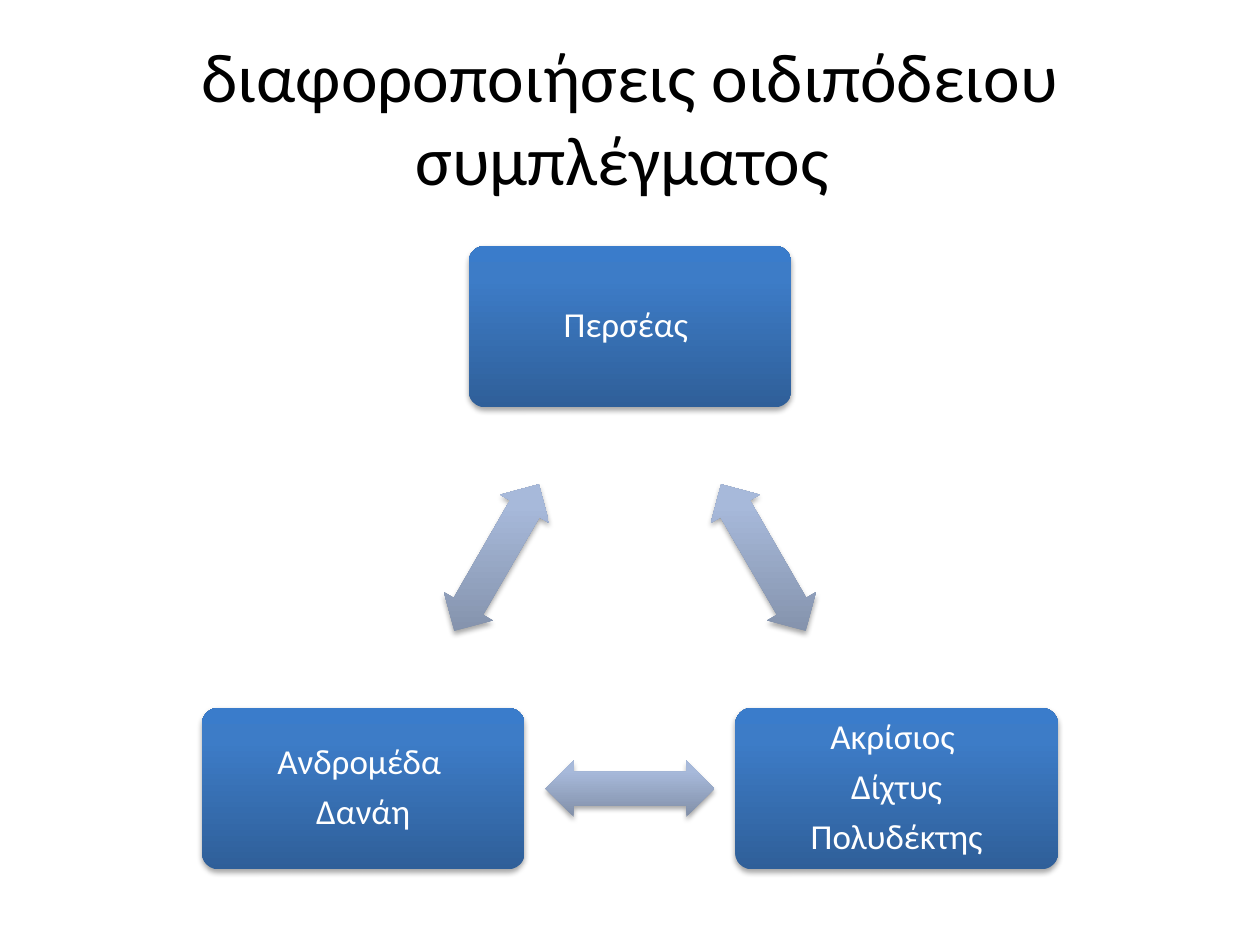
"""Build a slide with three linked boxes on a ring under a title."""
from math import cos, radians, sin

from pptx import Presentation
from pptx import oxml, util as u
from pptx.dml.color import RGBColor
from pptx.enum import shapes, text

Pt = u.Pt
NS = 'xmlns:a="http://schemas.openxmlformats.org/drawingml/2006/main"'
BLUE = ("2F5F99", "3D7CC7", "3A7CCB")
GREY = ("818FA8", "A7B9DA", "A7BADC")
MID_X, MID_Y, RADIUS = 360, 362.6, 176


def write(shape, lines, size, color, inset, para):
    frame = shape.text_frame
    look = dict(word_wrap=True, vertical_anchor=text.MSO_ANCHOR.MIDDLE)
    for side in ("left", "right", "top", "bottom"):
        look["margin_" + side] = Pt(inset)
    for key, value in look.items():
        setattr(frame, key, value)
    frame.text = "\n".join(lines)
    for line in frame.paragraphs:
        for key, value in para.items():
            setattr(line, key, value)
        for key, value in dict(name="Calibri", size=Pt(size)).items():
            setattr(line.runs[0].font, key, value)
        line.runs[0].font.color.rgb = RGBColor.from_string(color)


def draw(kind, x, y, wide, high, adjust, colors):
    shape = slide.shapes.add_shape(
        kind, Pt(x - wide / 2), Pt(y - high / 2), Pt(wide), Pt(high))
    for i, value in enumerate(adjust):
        shape.adjustments[i] = value
    shape.line.fill.background()
    stops = "".join(
        f'<a:gs pos="{pos}000"><a:srgbClr val="{color}"/></a:gs>'
        for pos, color in zip((0, 80, 100), colors))
    props = shape._element.spPr
    props.insert(2, oxml.parse_xml(
        f'<a:gradFill {NS} rotWithShape="0"><a:gsLst>{stops}</a:gsLst>'
        '<a:lin ang="16200000" scaled="0"/></a:gradFill>'))
    props.append(oxml.parse_xml(
        f'<a:effectLst {NS}><a:outerShdw blurRad="{Pt(3.1)}" dist="{Pt(1.8)}" '
        'dir="5400000" rotWithShape="0"><a:srgbClr val="000000">'
        '<a:alpha val="35000"/></a:srgbClr></a:outerShdw></a:effectLst>'))
    return shape


deck = Presentation()
deck.slide_width, deck.slide_height = Pt(720), Pt(540)
slide = deck.slides.add_slide(deck.slide_layouts[6])

center = dict(alignment=text.PP_ALIGN.CENTER)
title = slide.shapes.add_textbox(Pt(36), Pt(21.6), Pt(648), Pt(90))
write(title, ["διαφοροποιήσεις οιδιπόδειου συμπλέγματος "], 39.6, "000000", 4, center)

spaced = dict(center, line_spacing=0.9, space_after=Pt(7))
names = [
    ["Περσέας "],
    ["Ακρίσιος ", "Δίχτυς", "Πολυδέκτης"],
    ["Ανδρομέδα ", "Δανάη"],
]
for i, lines in enumerate(names):
    turn = radians(120 * i - 90)
    box = draw(shapes.MSO_SHAPE.ROUNDED_RECTANGLE,
               MID_X + RADIUS * cos(turn), MID_Y + RADIUS * sin(turn),
               184.4, 92.2, [0.1], BLUE)
    write(box, lines, 20, "FFFFFF", 6, spaced)
    turn += radians(60)
    arrow = draw(shapes.MSO_SHAPE.LEFT_RIGHT_ARROW,
                 MID_X + RADIUS / 2 * cos(turn), MID_Y + RADIUS / 2 * sin(turn),
                 96.6, 32.3, [0.6, 0.5], GREY)
    arrow.rotation = 60 + 120 * i

deck.save("out.pptx")
